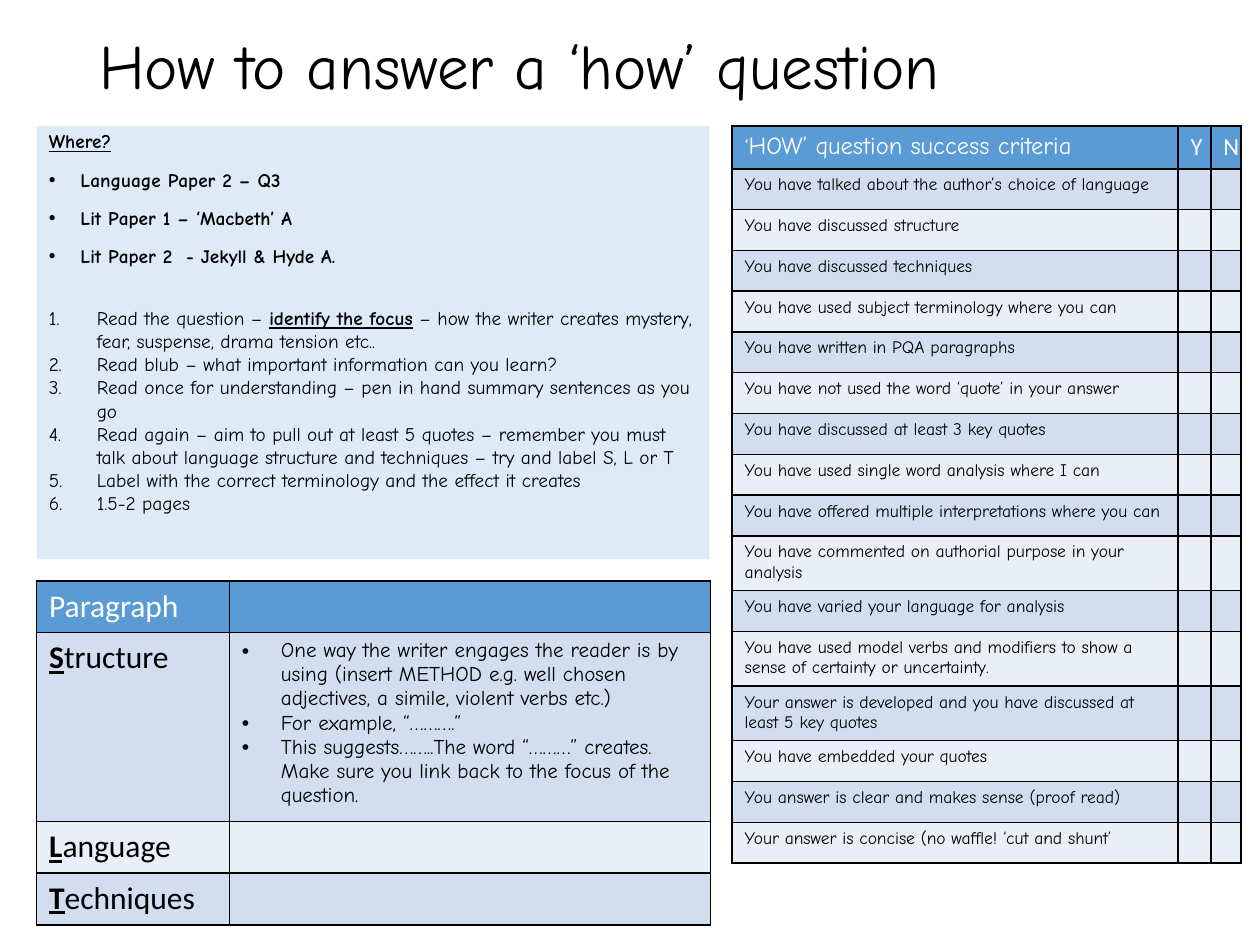
from dataclasses import dataclass

from lxml.etree import SubElement
from pptx import Presentation
from pptx.dml.color import RGBColor
from pptx.enum.shapes import MSO_SHAPE
from pptx.enum.text import MSO_ANCHOR, PP_ALIGN
from pptx.oxml import parse_xml
from pptx.oxml.ns import nsdecls, qn
from pptx.util import Inches, Pt


@dataclass(frozen=True)
class Theme:
    hand: str = "Comic Neue"
    plain: str = "Calibri"
    black: str = "000000"
    white: str = "FFFFFF"
    panel: str = "DEEBF7"
    header: str = "5B9BD5"
    bands: tuple = ("D2DEEF", "EAEFF7")
    title: int = 36
    label: int = 18
    heading: int = 14
    advice: int = 12
    steps: int = 11
    criteria: int = 10


@dataclass(frozen=True)
class Box:
    left: float
    top: float
    width: float
    height: float

    def emu(self):
        return [Inches(v) for v in (self.left, self.top, self.width, self.height)]


T = Theme()

WHERE = ["Language Paper 2 – Q3", "Lit Paper 1 – ‘Macbeth’ A", "Lit Paper 2  - Jekyll & Hyde A."]
STEPS = [
    [("Read the question – ", ""), ("identify the focus", "bu"),
     (" – how the writer creates mystery, fear, suspense, drama tension etc..", "")],
    [("Read blub – what important information can you learn?", "")],
    [("Read once for understanding – pen in hand summary sentences as you go", "")],
    [("Read again – aim to pull out at least 5 quotes – remember you must talk about "
      "language structure and techniques – try and label S, L or T", "")],
    [("Label with the correct terminology and the effect it creates", "")],
    [("1.5-2 pages", "")],
]
PARAGRAPH_PARTS = ["Structure", "Language", "Techniques"]
ADVICE = [
    "One way the writer engages the reader is by using (insert METHOD e.g. well chosen "
    "adjectives, a simile, violent verbs etc.)",
    "For example, “……….”",
    "This suggests……..The word “………” creates. Make sure you link back to the focus of the question.",
]
CRITERIA = [
    "You have talked about the author’s choice of language",
    "You have discussed structure",
    "You have discussed techniques",
    "You have used subject terminology where you can",
    "You have written in PQA paragraphs",
    "You have not used the word ‘quote’ in your answer",
    "You have discussed at least 3 key quotes",
    "You have used single word analysis where I can",
    "You have offered multiple interpretations where you can",
    "You have commented on authorial purpose in your analysis",
    "You have varied your language for analysis",
    "You have used model verbs and modifiers to show a sense of certainty or uncertainty.",
    "Your answer is developed and you have discussed at least 5 key quotes",
    "You have embedded your quotes",
    "You answer is clear and makes sense (proof read)",
    "Your answer is concise (no waffle! ‘cut and shunt’",
]
TWO_LINE_CRITERIA = {10, 12, 13}


def write(p, runs, size, font=T.hand, color=T.black):
    p.alignment = PP_ALIGN.LEFT
    for text, style in runs:
        r = p.add_run()
        r.text = text
        r.font.name = font
        r.font.size = Pt(size)
        r.font.bold = "b" in style
        r.font.underline = "u" in style
        r.font.color.rgb = RGBColor.from_string(color)


def add_bullet(p, indent, numbered=False):
    pPr = p._p.get_or_add_pPr()
    pPr.set("marL", str(Inches(indent)))
    pPr.set("indent", str(-Inches(indent)))
    if numbered:
        SubElement(pPr, qn("a:buAutoNum"), type="arabicPeriod")
    else:
        SubElement(pPr, qn("a:buFont"), typeface="Arial")
        SubElement(pPr, qn("a:buChar"), char="•")


def next_paragraph(tf, first):
    return tf.paragraphs[0] if first else tf.add_paragraph()


def add_title(slide, box):
    tf = slide.shapes.add_textbox(*box.emu()).text_frame
    tf.word_wrap = True
    tf.vertical_anchor = MSO_ANCHOR.MIDDLE
    p = tf.paragraphs[0]
    p.line_spacing = 0.9
    write(p, [("How to answer a ‘how’ question", "")], T.title)


def add_method_panel(slide, box):
    s = slide.shapes.add_shape(MSO_SHAPE.RECTANGLE, *box.emu())
    s.shadow.inherit = False
    s.fill.solid()
    s.fill.fore_color.rgb = RGBColor.from_string(T.panel)
    s.line.fill.background()
    tf = s.text_frame
    tf.word_wrap = True
    tf.vertical_anchor = MSO_ANCHOR.TOP
    p = tf.paragraphs[0]
    p.line_spacing = 0.9
    write(p, [("Where?", "bu")], T.steps)
    for text in WHERE:
        p = tf.add_paragraph()
        add_bullet(p, 0.25)
        p.line_spacing = 0.9
        p.space_before = Pt(10)
        write(p, [(text, "b")], T.steps)
    for i, runs in enumerate(STEPS):
        p = tf.add_paragraph()
        add_bullet(p, 0.38, numbered=True)
        p.space_before = Pt(0 if i else 22)
        write(p, runs, T.steps)


def add_grid(slide, box, cols, rows, empty_size):
    table = slide.shapes.add_table(len(rows), len(cols), *box.emu()).table
    for col, width in zip(table.columns, cols):
        col.width = Inches(width)
    for i, (row, height) in enumerate(zip(table.rows, rows)):
        row.height = Inches(height)
        color = T.bands[(i - 1) % 2] if i else T.header
        for cell in row.cells:
            cell.fill.solid()
            cell.fill.fore_color.rgb = RGBColor.from_string(color)
            tcPr = cell._tc.get_or_add_tcPr()
            for n, side in enumerate(("lnL", "lnR", "lnT", "lnB")):
                tcPr.insert(n, parse_xml(
                    f'<a:{side} {nsdecls("a")} w="{Pt(1)}"><a:solidFill>'
                    f'<a:srgbClr val="{T.black}"/></a:solidFill></a:{side}>'))
            end = SubElement(cell.text_frame.paragraphs[0]._p, qn("a:endParaRPr"))
            end.set("sz", str(empty_size * 100))
    return table


def add_paragraph_table(slide, box):
    line = 0.41
    rows = [line, box.height - 3 * line, line, line]
    table = add_grid(slide, box, [1.53, box.width - 1.53], rows, T.label)
    write(table.cell(0, 0).text_frame.paragraphs[0], [("Paragraph", "")],
          T.label, T.plain, T.white)
    for i, word in enumerate(PARAGRAPH_PARTS, 1):
        write(table.cell(i, 0).text_frame.paragraphs[0],
              [(word[0], "bu"), (word[1:], "")], T.label, T.plain)
    tf = table.cell(1, 1).text_frame
    for i, text in enumerate(ADVICE):
        p = next_paragraph(tf, i == 0)
        add_bullet(p, 0.31)
        write(p, [(text, "")], T.advice)


def add_criteria_table(slide, box):
    heading, double = 0.34, 0.42
    singles = len(CRITERIA) - len(TWO_LINE_CRITERIA)
    single = (box.height - heading - double * len(TWO_LINE_CRITERIA)) / singles
    rows = [heading] + [double if i in TWO_LINE_CRITERIA else single
                        for i in range(1, len(CRITERIA) + 1)]
    table = add_grid(slide, box, [box.width - 0.49, 0.26, 0.23], rows, T.criteria)
    p = table.cell(0, 0).text_frame.paragraphs[0]
    write(p, [("‘", "")], T.advice, color=T.white)
    write(p, [("HOW’ question success criteria", "")], T.heading, color=T.white)
    for col, text in enumerate("YN", 1):
        write(table.cell(0, col).text_frame.paragraphs[0], [(text, "")],
              T.heading, T.plain, T.white)
    for i, text in enumerate(CRITERIA, 1):
        write(table.cell(i, 0).text_frame.paragraphs[0], [(text, "")], T.criteria)


def main():
    prs = Presentation()
    prs.slide_width, prs.slide_height = Inches(10), Inches(7.5)
    slide = prs.slides.add_slide(prs.slide_layouts[6])
    add_title(slide, Box(0.69, 0.23, 8.62, 0.64))
    add_method_panel(slide, Box(0.29, 1, 5.34, 3.44))
    add_paragraph_table(slide, Box(0.29, 4.61, 5.35, 2.66))
    add_criteria_table(slide, Box(5.81, 1, 4.03, 5.81))
    prs.save("out.pptx")


if __name__ == "__main__":
    main()
